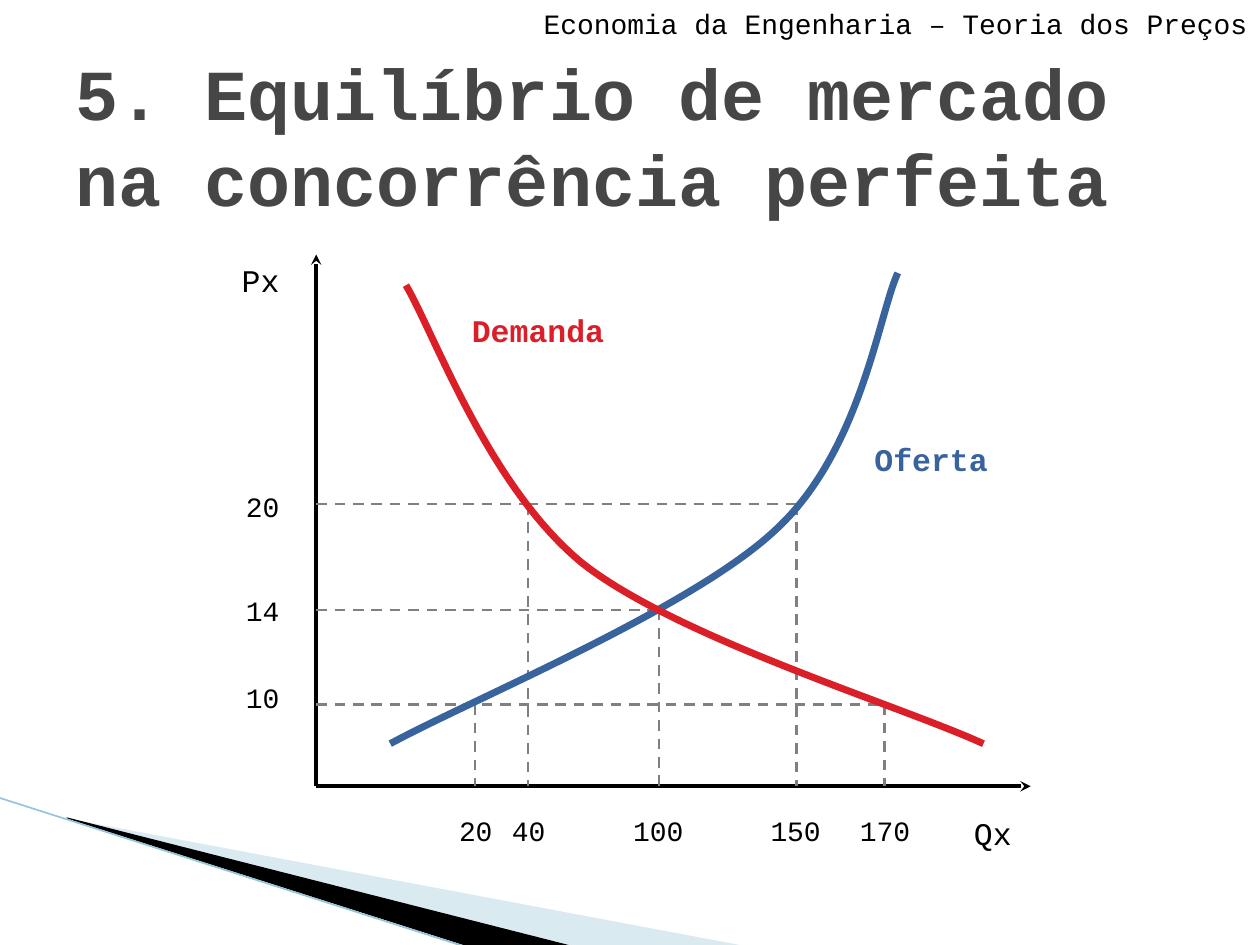
from lxml.etree import SubElement
from pptx import Presentation
from pptx.dml.color import RGBColor
from pptx.enum.dml import MSO_LINE
from pptx.enum.shapes import MSO_CONNECTOR
from pptx.enum.text import MSO_ANCHOR, MSO_AUTO_SIZE, PP_ALIGN
from pptx.oxml.ns import qn
from pptx.util import Pt

FONT = "Courier New"
BLACK, GREY, RED, BLUE = "000000", "808080", "DA1F28", "39639D"
LEFT, CENTER, RIGHT = PP_ALIGN.LEFT, PP_ALIGN.CENTER, PP_ALIGN.RIGHT

TITLE = "5. Equilíbrio de mercado na concorrência perfeita"
HEADER = "Economia da Engenharia – Teoria dos Preços"

# Chart geometry
ORIGIN_X, ORIGIN_Y = 180.7, 449.3
AXIS_TOP, AXIS_END = 145.4, 589
QUANTITY_X = {20: 271.4, 40: 301.7, 100: 376.6, 150: 455, 170: 505.4}
PRICE_Y = {20: 288, 14: 348.5, 10: 402.5}

# Price, quantities where its guide stops, quantities with a guide to the axis
GUIDES = [(20, [40, 150], [40, 150]), (14, [100], [100]), (10, [170], [20, 170])]

# Start point, then two control points and an end point for each Bézier segment
CURVES = [
    (BLUE, [(513.4, 155.5), (501.8, 180), (491.8, 258.5), (442.8, 303.1),
            (394.6, 348.5), (269.3, 399.6), (223.2, 424.8)]),
    (RED, [(231.8, 163.4), (248.4, 190.1), (278.6, 277.9), (333.4, 321.8),
           (388.1, 365), (514.1, 403.2), (561.6, 424.8)]),
]

# Text, left, top, width, height, size, colour, bold, alignment
LABELS = [
    ("Px", 131, 145.4, 36.7, 29, 18, BLACK, False, LEFT),
    ("Qx", 549.4, 461.5, 39.6, 29, 18, BLACK, False, LEFT),
    ("Demanda", 256.3, 174.2, 102.2, 29, 18, RED, True, CENTER),
    ("Oferta", 490.3, 247.7, 83.5, 29, 18, BLUE, True, CENTER),
    (HEADER, 0, 0, 720, 25.2, 16, BLACK, False, RIGHT),
]
TICK_TOP, TICK_HEIGHT = 461.5, 26.6
QUANTITY_TICKS = {20: (250.6, 42.5), 40: (284.4, 35.3), 100: (353.5, 45.4),
                  150: (432, 45.4), 170: (483.1, 45.4)}
PRICE_TICK_LEFT, PRICE_TICK_WIDTH = 132.5, 35.3
PRICE_TICK_TOPS = {20: 276.5, 14: 335.5, 10: 385.2}

# Corner decoration: colour, opacity in per cent, outline
WEDGES = [
    ("A0CBDC", 40, [(39.6, 468.4), (428.4, 540.7), (328.3, 540.7), (39.6, 468)]),
    (BLACK, 100, [(38.2, 467.3), (329, 540.7), (267.8, 541.4), (38.9, 468)]),
]


def rgb(code):
    return RGBColor.from_string(code)


def add_line(start, end, color, width, dashed=False, arrow=False):
    line = slide.shapes.add_connector(
        MSO_CONNECTOR.STRAIGHT, *(Pt(v) for v in (*start, *end)))
    line.line.color.rgb = rgb(color)
    line.line.width = Pt(width)
    if dashed:
        line.line.dash_style = MSO_LINE.DASH
    if arrow:
        SubElement(line.line._get_or_add_ln(), qn("a:tailEnd"), type="stealth")
    SubElement(line._element.spPr, qn("a:effectLst"))


def add_outline(points, closed):
    builder = slide.shapes.build_freeform(*points[0], scale=Pt(1))
    builder.add_line_segments(points[1:], close=closed)
    shape = builder.convert_to_shape()
    shape.shadow.inherit = False
    return shape


def add_wedge(color, opacity, points):
    shape = add_outline(points, True)
    shape.fill.solid()
    shape.fill.fore_color.rgb = rgb(color)
    shape.line.fill.background()
    if opacity < 100:
        tint = shape._element.spPr.find(".//" + qn("a:srgbClr"))
        SubElement(tint, qn("a:alpha"), val=str(opacity * 1000))


def add_curve(color, points):
    """Turn each three straight steps of an outline into one Bézier segment."""
    shape = add_outline(points, False)
    shape.fill.background()
    shape.line.color.rgb = rgb(color)
    shape.line.width = Pt(4)
    outline = shape._element.spPr.find(".//" + qn("a:path"))
    steps = outline.findall(qn("a:lnTo"))
    for first in range(0, len(steps), 3):
        bezier = SubElement(outline, qn("a:cubicBezTo"))
        for step in steps[first:first + 3]:
            bezier.append(step[0])
            outline.remove(step)


def add_label(text, left, top, width, height, size=16, color=BLACK,
              bold=False, align=CENTER, wrap=True):
    box = slide.shapes.add_textbox(Pt(left), Pt(top), Pt(width), Pt(height))
    frame = box.text_frame
    frame.word_wrap = wrap
    frame.auto_size = MSO_AUTO_SIZE.SHAPE_TO_FIT_TEXT
    paragraph = frame.paragraphs[0]
    paragraph.alignment = align
    write_run(paragraph, text, size, color, bold)


def write_run(paragraph, text, size, color, bold):
    run = paragraph.add_run()
    run.text = text
    run.font.name = FONT
    run.font.size = Pt(size)
    run.font.bold = bold
    run.font.color.rgb = rgb(color)


prs = Presentation()
prs.slide_width, prs.slide_height = Pt(720), Pt(540)
slide = prs.slides.add_slide(prs.slide_layouts[5])

for wedge in WEDGES:
    add_wedge(*wedge)
add_line((-0.7, 455.8), (267.1, 541.4), "97C5D8", 0.95)

title = slide.shapes.title
title.left, title.top, title.width, title.height = Pt(36), Pt(21.6), Pt(648), Pt(110.9)
title.text_frame.word_wrap = True
title.text_frame.auto_size = MSO_AUTO_SIZE.NONE
title.text_frame.vertical_anchor = MSO_ANCHOR.MIDDLE
heading = title.text_frame.paragraphs[0]
heading.alignment = LEFT
write_run(heading, TITLE, 41, "464646", True)

for axis_end in [(ORIGIN_X, AXIS_TOP), (AXIS_END, ORIGIN_Y)]:
    add_line((ORIGIN_X, ORIGIN_Y), axis_end, BLACK, 2, arrow=True)

for price, stops, drops in GUIDES:
    y = PRICE_Y[price]
    xs = [ORIGIN_X] + [QUANTITY_X[stop] for stop in stops]
    for x_from, x_to in zip(xs, xs[1:]):
        add_line((x_from, y), (x_to, y), GREY, 1.5, dashed=True)
    for drop in drops:
        x = QUANTITY_X[drop]
        add_line((x, y), (x, ORIGIN_Y), GREY, 1.5, dashed=True)

for curve in CURVES:
    add_curve(*curve)

for quantity, (left, width) in QUANTITY_TICKS.items():
    add_label(str(quantity), left, TICK_TOP, width, TICK_HEIGHT, wrap=False)
for price, top in PRICE_TICK_TOPS.items():
    add_label(str(price), PRICE_TICK_LEFT, top, PRICE_TICK_WIDTH, TICK_HEIGHT, wrap=False)
for label in LABELS:
    add_label(*label)

prs.save("out.pptx")
